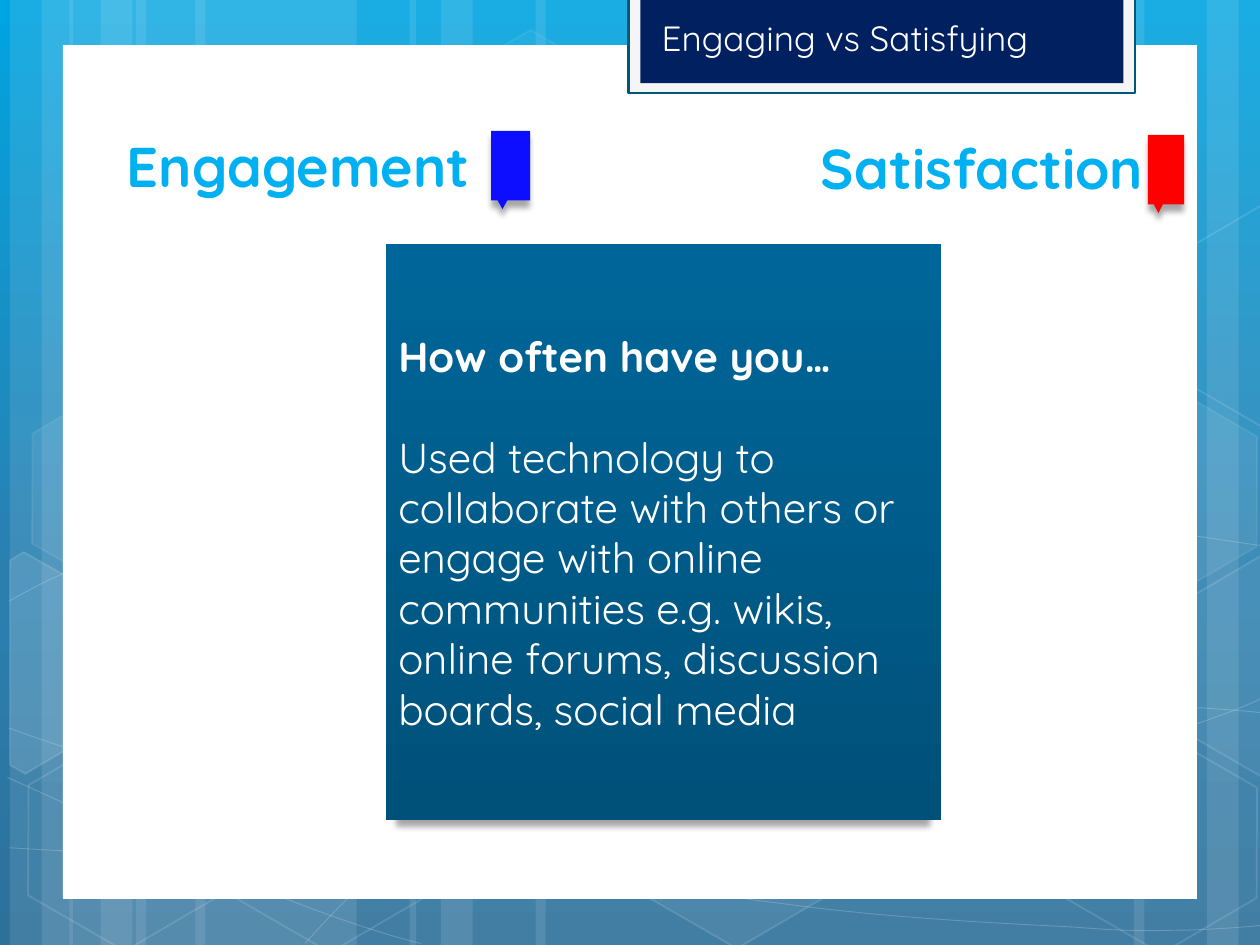
from copy import deepcopy

from lxml import etree
from pptx import Presentation
from pptx.dml.color import RGBColor
from pptx.enum.shapes import MSO_SHAPE
from pptx.enum.text import MSO_ANCHOR, PP_ALIGN
from pptx.oxml.ns import qn
from pptx.util import Cm, Pt

RECT, HEXAGON, CALLOUT = MSO_SHAPE.RECTANGLE, MSO_SHAPE.HEXAGON, MSO_SHAPE.RECTANGULAR_CALLOUT
TOP, MIDDLE, LEFT = MSO_ANCHOR.TOP, MSO_ANCHOR.MIDDLE, PP_ALIGN.LEFT

WHITE = RGBColor(0xFF, 0xFF, 0xFF)
BLACK = RGBColor(0x00, 0x00, 0x00)
PALE = RGBColor(0xF5, 0xF5, 0xF5)
TEAL = RGBColor(0x00, 0x58, 0x78)
NAVY = RGBColor(0x00, 0x20, 0x60)
SKY = RGBColor(0x00, 0xB0, 0xF0)
BLUE = RGBColor(0x0D, 0x0D, 0xFF)
RED = RGBColor(0xFF, 0x00, 0x00)
BACKGROUND = [(0, RGBColor(0x00, 0xA4, 0xE0)), (0.62, RGBColor(0x2B, 0x7F, 0xAF)),
              (1, RGBColor(0x2D, 0x70, 0x9A))]
CARD = [(0, RGBColor(0x00, 0x66, 0x99)), (1, RGBColor(0x00, 0x51, 0x7A))]

# left, width
BARS = [(2.74, 4.45), (0.2, 1.27), (0.84, 2.11), (3.94, 4.45), (1.4, 1.27), (2.03, 2.11),
        (18.62, 4.45), (24.33, 1.27), (22.86, 2.11), (10.8, 7.82), (8.26, 1.27), (8.89, 2.11)]
# start point, then two control points and an end point for each cubic segment
CURVES = [
    [(0.18, 17.09), (1.55, 17.17), (2.92, 17.25), (4.83, 17.22), (6.73, 17.2), (9.09, 17.15),
     (11.63, 16.89), (14.17, 16.64), (17.78, 16.15), (20.12, 15.67), (22.43, 15.19),
     (24.82, 14.43), (25.58, 14)],
    [(0.18, 12.12), (0.91, 11.71), (1.65, 11.33), (3.07, 10.95), (4.52, 10.57), (6.58, 10.01),
     (8.81, 9.83), (11.07, 9.65), (13.82, 9.63), (16.61, 9.83), (19.41, 10.03),
     (24.05, 10.82), (25.58, 11.02)],
    [(0.15, 15.67), (3.23, 17.07), (6.27, 18.47), (8.48, 19.02)],
    [(0.18, 14.68), (0.97, 14.96), (1.78, 15.24), (3.25, 15.65), (4.72, 16.03), (6.93, 16.66),
     (9.07, 17.09), (11.18, 17.53), (13.84, 17.98), (15.95, 18.24), (18.06, 18.52),
     (20.32, 18.62), (21.67, 18.69), (22.99, 18.8), (23.34, 18.75), (24, 18.75),
     (24.66, 18.72), (25.12, 18.69), (25.58, 18.64)],
    [(6.15, 19.02), (6.6, 18.52), (7.06, 18.01), (7.67, 17.55), (8.28, 17.09), (9.14, 16.59),
     (9.86, 16.23), (10.57, 15.88), (11, 15.72), (11.94, 15.47), (12.88, 15.21),
     (14.55, 14.86), (15.44, 14.68), (16.36, 14.5), (16.48, 14.5), (17.27, 14.45),
     (18.08, 14.38), (19.3, 14.3), (20.17, 14.27), (21.06, 14.25), (22.5, 14.27),
     (22.5, 14.27), (23, 14.27), (23.6, 14.27), (24.21, 14.27), (24.66, 14.3),
     (25.1, 14.33), (25.55, 14.38)],
]
# left, top, fill opacity, line opacity
HEXAGONS = [(8.48, 0.91, 4, 8), (12.62, 14.96, 6, 12), (0.28, 15.01, None, 12),
            (0.36, 7.92, 7, 8), (4.42, 15.04, None, 12), (19.13, 11.51, 10, 12),
            (21.18, 15.06, None, 12), (21.18, 7.98, 7, 8)]
# fill opacity, corners
CUT_HEXAGONS = [
    (10, [(0.2, 11.3), (0.48, 11.13), (2.44, 12.24), (2.41, 14.48), (0.51, 15.6), (0.2, 15.42)]),
    (4, [(23.52, 12.32), (25.43, 11.2), (25.63, 11.33), (25.63, 15.57), (25.45, 15.67),
         (23.52, 14.55)]),
    (None, [(23.52, 5.26), (25.43, 4.14), (25.65, 4.27), (25.63, 8.51), (25.45, 8.61),
            (23.52, 7.49)]),
]


def set_opacity(parent, percent):
    color = parent.find(qn("a:solidFill")).find(qn("a:srgbClr"))
    etree.SubElement(color, qn("a:alpha"), val=str(percent * 1000))


def set_gradient(fill, owner, stops):
    """Give fill, held by the XML element owner, a gradient from top to bottom."""
    fill.gradient()
    fill.gradient_angle = 270
    gs_list = next(owner.iter(qn("a:gsLst")))
    while len(gs_list) < len(stops):
        gs_list.append(deepcopy(gs_list[-1]))
    for stop, (position, color) in zip(fill.gradient_stops, stops):
        stop.position = position
        stop.color.rgb = color


def bend(sp):
    """Turn every three line segments of a freeform into one cubic segment."""
    path = next(sp.element.iter(qn("a:path")))
    lines = path.findall(qn("a:lnTo"))
    for i in range(0, len(lines), 3):
        cubic = etree.SubElement(path, qn("a:cubicBezTo"))
        for line in lines[i:i + 3]:
            cubic.append(line[0])
            path.remove(line)


def write(p, text, size=24, color=WHITE, bold=False, before=0, font="Quicksand"):
    p.alignment = LEFT
    p.space_before = Pt(before)
    r = p.add_run()
    r.text = text
    r.font.name, r.font.size, r.font.bold = font, Pt(size), bold
    r.font.color.rgb = color


class SlideBuilder:
    def __init__(self, s):
        self.s = s
        self.shapes = s.shapes

    def style(self, sp, fill=None, opacity=None, line=None, width=1, line_opacity=None):
        sp.shadow.inherit = False
        if fill is None:
            sp.fill.background()
        else:
            sp.fill.solid()
            sp.fill.fore_color.rgb = fill
            if opacity:
                set_opacity(sp.element.spPr, opacity)
        if line is None:
            sp.line.fill.background()
        else:
            sp.line.color.rgb = line
            sp.line.width = Pt(width)
            if line_opacity:
                set_opacity(sp.element.spPr.find(qn("a:ln")), line_opacity)
        return sp

    def shape(self, kind, x, y, w, h, **style):
        sp = self.shapes.add_shape(kind, Cm(x), Cm(y), Cm(w), Cm(h))
        return self.style(sp, **style)

    def outline(self, points, close, **style):
        corners = [(Cm(x), Cm(y)) for x, y in points]
        builder = self.shapes.build_freeform(*corners[0])
        builder.add_line_segments(corners[1:], close=close)
        return self.style(builder.convert_to_shape(), **style)

    def drop_shadow(self, sp):
        effects = sp.element.spPr.find(qn("a:effectLst"))
        shadow = etree.SubElement(effects, qn("a:outerShdw"), blurRad=str(Pt(3.5)),
                                  dist=str(Pt(4)), dir="5400000", sx="96000",
                                  algn="ctr", rotWithShape="0")
        color = etree.SubElement(shadow, qn("a:srgbClr"), val=str(BLACK))
        etree.SubElement(color, qn("a:alpha"), val="34000")

    def title(self, text, x, y, w, h):
        sp = self.s.shapes.title
        sp.left, sp.top, sp.width, sp.height = Cm(x), Cm(y), Cm(w), Cm(h)
        tf = sp.text_frame
        tf.vertical_anchor = TOP
        tf.margin_left = Cm(0.43)
        write(tf.paragraphs[0], text, size=20)

    def heading(self, text, x, y, w, h):
        tf = self.shapes.add_textbox(Cm(x), Cm(y), Cm(w), Cm(h)).text_frame
        tf.word_wrap = True
        write(tf.paragraphs[0], text, size=32, color=SKY, bold=True)

    def card(self, question, detail, x, y, w, h):
        sp = self.shape(RECT, x, y, w, h)
        set_gradient(sp.fill, sp.element, CARD)
        self.drop_shadow(sp)
        tf = sp.text_frame
        tf.word_wrap = True
        tf.vertical_anchor = MIDDLE
        write(tf.paragraphs[0], question, bold=True)
        write(tf.add_paragraph(), detail, before=28.8)

    def backdrop(self):
        """Draw the decoration as one group and hand it to the layout."""
        set_gradient(self.s.background.fill, self.s.element, BACKGROUND)
        group = self.s.shapes.add_group_shape()
        self.shapes = group.shapes
        for x, w in BARS:
            self.shape(RECT, x, 0, w, 19.05, fill=WHITE, opacity=10)
        for points in CURVES:
            bend(self.outline(points, False, line=WHITE, width=0.5, line_opacity=20))
        for x, y, opacity, line_opacity in HEXAGONS:
            sp = self.shape(HEXAGON, x, y, 4.45, 3.86, fill=WHITE if opacity else None,
                            opacity=opacity, line=WHITE, line_opacity=line_opacity)
            sp.adjustments[0] = 0.285
            sp.rotation = 30
        for opacity, corners in CUT_HEXAGONS:
            self.outline(corners, True, fill=WHITE if opacity else None, opacity=opacity,
                         line=WHITE, line_opacity=12)
        self.shapes = self.s.shapes
        frames = [
            self.shape(RECT, 1.27, 0.91, 22.86, 17.2, fill=WHITE, line=WHITE, width=0.5),
            self.shape(RECT, 12.67, -0.05, 10.21, 1.93, fill=PALE, line=TEAL, width=1.25),
            self.shape(RECT, 12.91, -0.05, 9.74, 1.73, fill=NAVY),
        ]
        layout = self.s.slide_layout
        for placeholder in list(layout.placeholders)[1:]:
            layout.shapes.element.remove(placeholder.element)
        for sp in [group, *frames]:
            layout.shapes.element.append(sp.element)


def main():
    prs = Presentation()
    prs.slide_width, prs.slide_height = Cm(25.4), Cm(19.05)
    b = SlideBuilder(prs.slides.add_slide(prs.slide_layouts.get_by_name("Title Only")))
    b.backdrop()
    b.title("Engaging vs Satisfying", 12.91, 0.2, 9.8, 1.73)
    b.card("How often have you…",
           "Used technology to collaborate with others or engage with online communities "
           "e.g. wikis, online forums, discussion boards, social media",
           7.78, 4.92, 11.2, 11.61)
    b.heading("Engagement", 2.31, 2.53, 9.8, 1.63)
    b.heading("Satisfaction", 16.3, 2.57, 7.54, 1.63)
    for x, y, w, color in [(9.9, 2.64, 0.79, BLUE), (23.14, 2.72, 0.73, RED)]:
        b.drop_shadow(b.shape(CALLOUT, x, y, w, 1.4, fill=color))
    prs.save("out.pptx")


if __name__ == "__main__":
    main()
